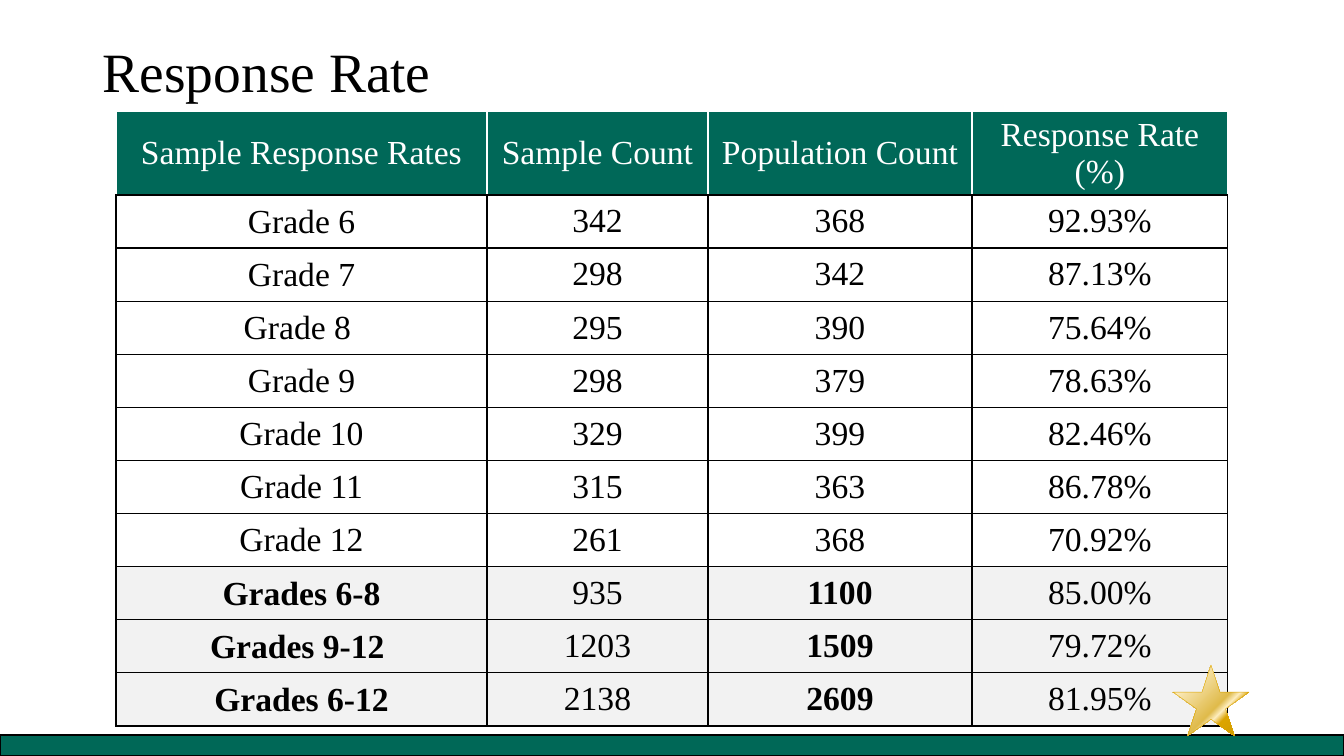
import pptx
import pptx.dml.color
import pptx.enum.shapes
import pptx.enum.text
import pptx.oxml
import pptx.oxml.ns
import pptx.util

RGBColor = pptx.dml.color.RGBColor
SHAPE = pptx.enum.shapes.MSO_SHAPE
MIDDLE = pptx.enum.text.MSO_ANCHOR.MIDDLE
CENTER = pptx.enum.text.PP_ALIGN.CENTER

EMU_PER_PX = 914400 / 100.8
FONT = "Times New Roman"

BLACK = RGBColor(0x00, 0x00, 0x00)
WHITE = RGBColor(0xFF, 0xFF, 0xFF)
HEADER_GREEN = RGBColor(0x00, 0x68, 0x58)
BAR_GREEN = RGBColor(0x00, 0x68, 0x57)
TOTAL_GRAY = RGBColor(0xF2, 0xF2, 0xF2)
GOLD = RGBColor(0xDB, 0xA4, 0x00)
DARK_GOLD = RGBColor(0xCC, 0x99, 0x00)
STAR_STOPS = [
    (0, DARK_GOLD),
    (15, RGBColor(0xF0, 0xD1, 0x76)),
    (22, RGBColor(0xFA, 0xE9, 0xB8)),
    (58, RGBColor(0xE0, 0xBB, 0x4B)),
    (65, RGBColor(0xFF, 0xF0, 0xC2)),
    (72, GOLD),
    (100, DARK_GOLD),
]

HEADERS = ["Sample Response Rates", "Sample Count", "Population Count", "Response Rate (%)"]
GRADES = [
    ("Grade 6", "342", "368", "92.93%"),
    ("Grade 7", "298", "342", "87.13%"),
    ("Grade 8 ", "295", "390", "75.64%"),
    ("Grade 9", "298", "379", "78.63%"),
    ("Grade 10", "329", "399", "82.46%"),
    ("Grade 11", "315", "363", "86.78%"),
    ("Grade 12", "261", "368", "70.92%"),
]
TOTALS = [
    ("Grades 6-8", "935", "1100", "85.00%"),
    ("Grades 9-12 ", "1203", "1509", "79.72%"),
    ("Grades 6-12", "2138", "2609", "81.95%"),
]
COL_WIDTHS = [371, 221, 264, 256]
HEADER_HEIGHT = 84


def px(n):
    return pptx.util.Emu(round(n * EMU_PER_PX))


def box_px(box):
    return [px(n) for n in box]


def style_run(r, size, color, bold=False):
    r.font.name = FONT
    r.font.size = pptx.util.Pt(size)
    r.font.color.rgb = color
    r.font.bold = bold


def set_borders(cell, colors):
    """Give the left, right, top and bottom sides 1 pt lines."""
    tcPr = cell._tc.get_or_add_tcPr()
    for i, (side, color) in enumerate(zip("LRTB", colors)):
        tcPr.insert(i, pptx.oxml.parse_xml(
            f'<a:ln{side} {pptx.oxml.ns.nsdecls("a")} w="12700"><a:solidFill>'
            f'<a:srgbClr val="{color}"/></a:solidFill></a:ln{side}>'))


def fill_cell(cell, text, fill, color, borders, bold, insets):
    cell.fill.solid()
    cell.fill.fore_color.rgb = fill
    set_borders(cell, borders)
    cell.vertical_anchor = MIDDLE
    cell.margin_left, cell.margin_top, cell.margin_right, cell.margin_bottom = box_px(insets)
    cell.text_frame.text = text
    p = cell.text_frame.paragraphs[0]
    p.alignment = CENTER
    style_run(p.runs[0], 24, color, bold)


def add_title(slide, box):
    tf = slide.shapes.add_textbox(*box_px(box)).text_frame
    tf.word_wrap = True
    tf.vertical_anchor = MIDDLE
    tf.text = "Response Rate"
    p = tf.paragraphs[0]
    p.line_spacing = 0.9
    style_run(p.runs[0], 39.6, BLACK)


def add_rate_table(slide, box):
    rows = [HEADERS] + GRADES + TOTALS
    table = slide.shapes.add_table(len(rows), len(HEADERS), *box_px(box)).table
    table.horz_banding = False
    for col, width in zip(table.columns, COL_WIDTHS):
        col.width = px(width)

    body_height = (box[3] - HEADER_HEIGHT) / (len(rows) - 1)
    first_total = len(rows) - len(TOTALS)
    for i, values in enumerate(rows):
        header, total = i == 0, i >= first_total
        table.rows[i].height = px(HEADER_HEIGHT if header else body_height)
        fill = HEADER_GREEN if header else TOTAL_GRAY if total else WHITE
        color = WHITE if header else BLACK
        borders = [color] * 3 + [BLACK]
        for j, text in enumerate(values):
            insets = (1, 1, 1, 0) if header or j == 0 else (7, 0, 7, 0)
            bold = total and j in (0, 2)
            fill_cell(table.cell(i, j), text, fill, color, borders, bold, insets)


def add_footer_bar(slide, box):
    sp = slide.shapes.add_shape(SHAPE.RECTANGLE, *box_px(box))
    sp.shadow.inherit = False
    sp.fill.solid()
    sp.fill.fore_color.rgb = BAR_GREEN
    sp.line.color.rgb = BLACK
    sp.line.width = pptx.util.Pt(1.5)


def add_star(slide, box):
    sp = slide.shapes.add_shape(SHAPE.STAR_5_POINT, *box_px(box))
    sp.shadow.inherit = False
    sp.line.color.rgb = GOLD
    sp.line.width = pptx.util.Pt(0.25)
    # Golden sheen running down to the right
    sp.fill.gradient()
    sp.fill.gradient_angle = 315
    stops = sp._element.spPr.find(".//" + pptx.oxml.ns.qn("a:gsLst"))
    stops.clear()
    for percent, color in STAR_STOPS:
        stops.append(pptx.oxml.parse_xml(
            f'<a:gs {pptx.oxml.ns.nsdecls("a")} pos="{percent * 1000}">'
            f'<a:srgbClr val="{color}"/></a:gs>'))


def main():
    prs = pptx.Presentation()
    prs.slide_width, prs.slide_height = px(1344), px(756)
    slide = prs.slides.add_slide(prs.slide_layouts[6])
    add_title(slide, (93, 40, 1159, 69))
    add_rate_table(slide, (116, 111, sum(COL_WIDTHS), 615))
    add_footer_bar(slide, (0, 735, 1344, 21))
    add_star(slide, (1173, 665, 76, 71))
    prs.save("out.pptx")


if __name__ == "__main__":
    main()
